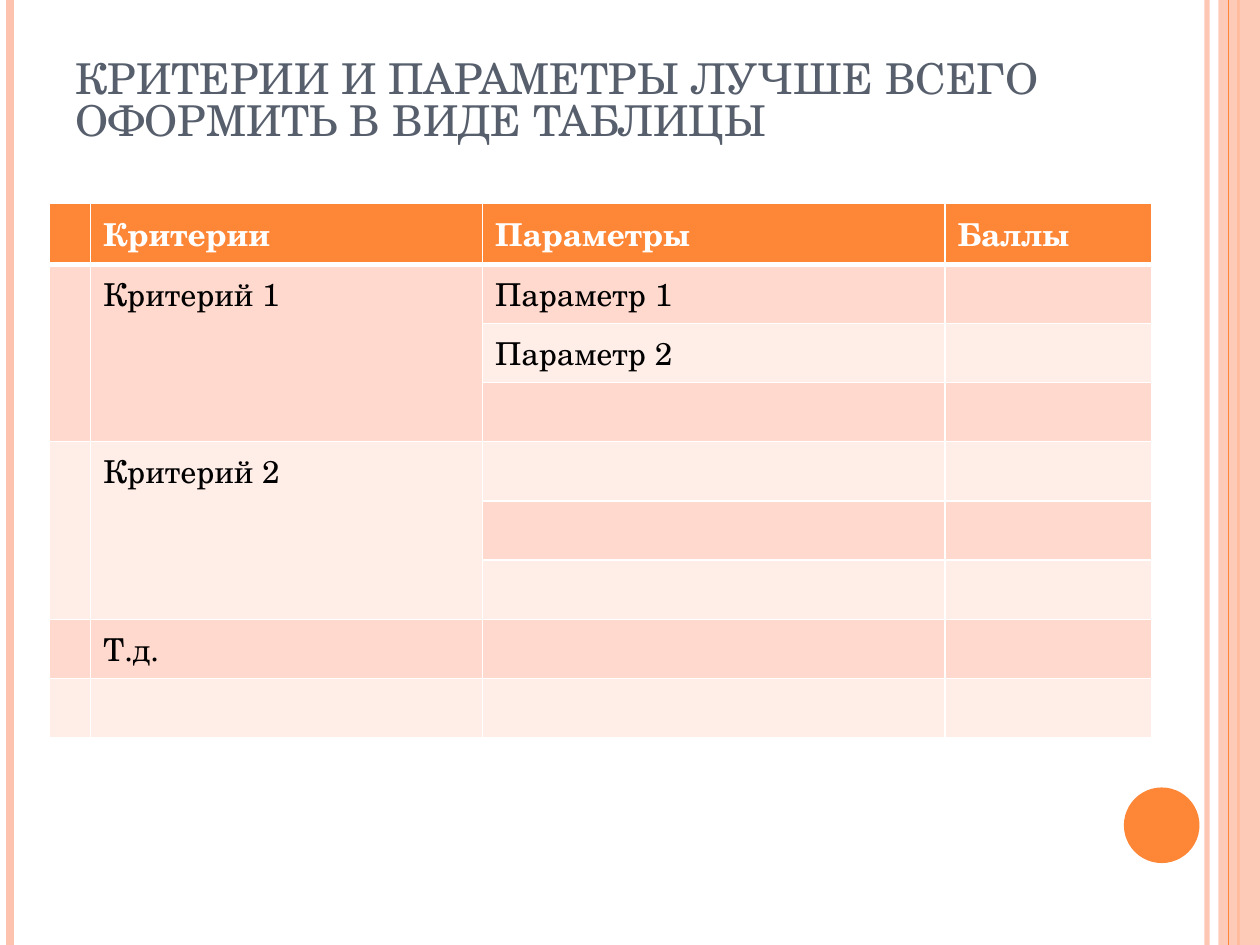
import pptx
import pptx.util
import pptx.dml.color
import pptx.enum.shapes
import pptx.enum.text
import pptx.oxml
import pptx.oxml.ns
from pptx.util import Inches


class Theme:
    font = "TeX Gyre Schola"
    orange = "FE8637"
    peach = "FEC3AE"
    slate = "575F6D"
    white = "FFFFFF"
    black = "000000"
    bands = ["FFEDE8", "FFD9CE"]
    head = 24.3
    body = 18


def paint(part, tone, alpha=100):
    part.rgb = pptx.dml.color.RGBColor.from_string(tone)
    if alpha < 100:
        node = part._xFill.find(pptx.oxml.ns.qn("a:srgbClr"))
        node.append(pptx.oxml.parse_xml(
            f'<a:alpha {pptx.oxml.ns.nsdecls("a")} val="{alpha * 1000}"/>'))


def write(para, text, size, tone, bold=False):
    run = para.add_run()
    run.text = text
    run.font.name = Theme.font
    run.font.size = pptx.util.Pt(size)
    run.font.bold = bold
    paint(run.font.color, tone)


deck = pptx.Presentation()
deck.slide_width = Inches(10)
deck.slide_height = Inches(7.5)
slide = deck.slides.add_slide(deck.slide_layouts[5])
kinds = pptx.enum.shapes.MSO_SHAPE

decor = [
    ("line", 9.58, Theme.peach, 3, 93),
    ("line", 0.08, Theme.peach, 4.5, 100),
    ("line", 9.83, Theme.orange, 1.5, 100),
    (kinds.RECTANGLE, (9.67, 0, 0.33, 7.5), Theme.peach, 0, 87),
    ("line", 9.75, Theme.orange, 0.75, 100),
    (kinds.OVAL, (8.92, 6.25, 0.6, 0.6), Theme.orange, 0, 100),
]
for kind, place, tone, width, alpha in decor:
    if kind == "line":
        item = slide.shapes.add_connector(
            pptx.enum.shapes.MSO_CONNECTOR.STRAIGHT,
            Inches(place), 0, Inches(place), Inches(7.5))
        item.line.width = pptx.util.Pt(width)
        fill = item.line.fill
    else:
        item = slide.shapes.add_shape(kind, *map(Inches, place))
        item.shadow.inherit = False
        item.line.fill.background()
        fill = item.fill
    fill.solid()
    paint(fill.fore_color, tone)
    props = item._element.spPr
    if alpha < 100:
        for node in props.iter(pptx.oxml.ns.qn("a:srgbClr")):
            node.append(pptx.oxml.parse_xml(
                f'<a:alpha {pptx.oxml.ns.nsdecls("a")} val="{alpha * 1000}"/>'))
    if kind == "line":
        props.append(pptx.oxml.parse_xml(
            f'<a:effectLst {pptx.oxml.ns.nsdecls("a")}/>'))

title = slide.shapes.title
title.left, title.top = Inches(0.5), Inches(0.3)
title.width, title.height = Inches(8.17), Inches(1.25)
frame = title.text_frame
frame.word_wrap = True
frame.auto_size = pptx.enum.text.MSO_AUTO_SIZE.NONE
frame.vertical_anchor = pptx.enum.text.MSO_ANCHOR.BOTTOM
frame.margin_bottom = Inches(0.4)
para = frame.paragraphs[0]
para.alignment = pptx.enum.text.PP_ALIGN.LEFT
para.line_spacing = 0.82
write(para, "КРИТЕРИИ И ПАРАМЕТРЫ ЛУЧШЕ ВСЕГО ОФОРМИТЬ В ВИДЕ ТАБЛИЦЫ",
      Theme.head, Theme.slate)

rows = [
    ["", "Критерии", "Параметры", "Баллы"],
    ["", "Критерий 1", "Параметр 1", ""],
    ["", "", "Параметр 2", ""],
    ["", "", "", ""],
    ["", "Критерий 2", "", ""],
    ["", "", "", ""],
    ["", "", "", ""],
    ["", "Т.д.", "", ""],
    ["", "", "", ""],
]
cols = [0.33, 3.11, 3.67, 1.64]
high = 0.47
table = slide.shapes.add_table(
    len(rows), len(cols), Inches(0.39), Inches(1.61),
    Inches(sum(cols)), Inches(high * len(rows))).table
table.horz_banding = False
for col, width in zip(table.columns, cols):
    col.width = Inches(width)
for r, texts in enumerate(rows):
    table.rows[r].height = Inches(high)
    for c, text in enumerate(texts):
        cell = table.cell(r, c)
        props = cell._tc.get_or_add_tcPr()
        for side in "LRTB":
            thick = (r, side) in [(0, "B"), (1, "T")]
            props.append(pptx.oxml.parse_xml(
                f'<a:ln{side} {pptx.oxml.ns.nsdecls("a")} '
                f'w="{pptx.util.Pt(3 if thick else 1)}"><a:solidFill>'
                f'<a:srgbClr val="{Theme.white}"/></a:solidFill></a:ln{side}>'))
        cell.fill.solid()
        paint(cell.fill.fore_color, Theme.bands[r % 2] if r else Theme.orange)
        if text:
            write(cell.text_frame.paragraphs[0], text, Theme.body,
                  Theme.black if r else Theme.white, r == 0)
for top in (1, 4):
    for c in (0, 1):
        table.cell(top, c).merge(table.cell(top + 2, c))

deck.save("out.pptx")
